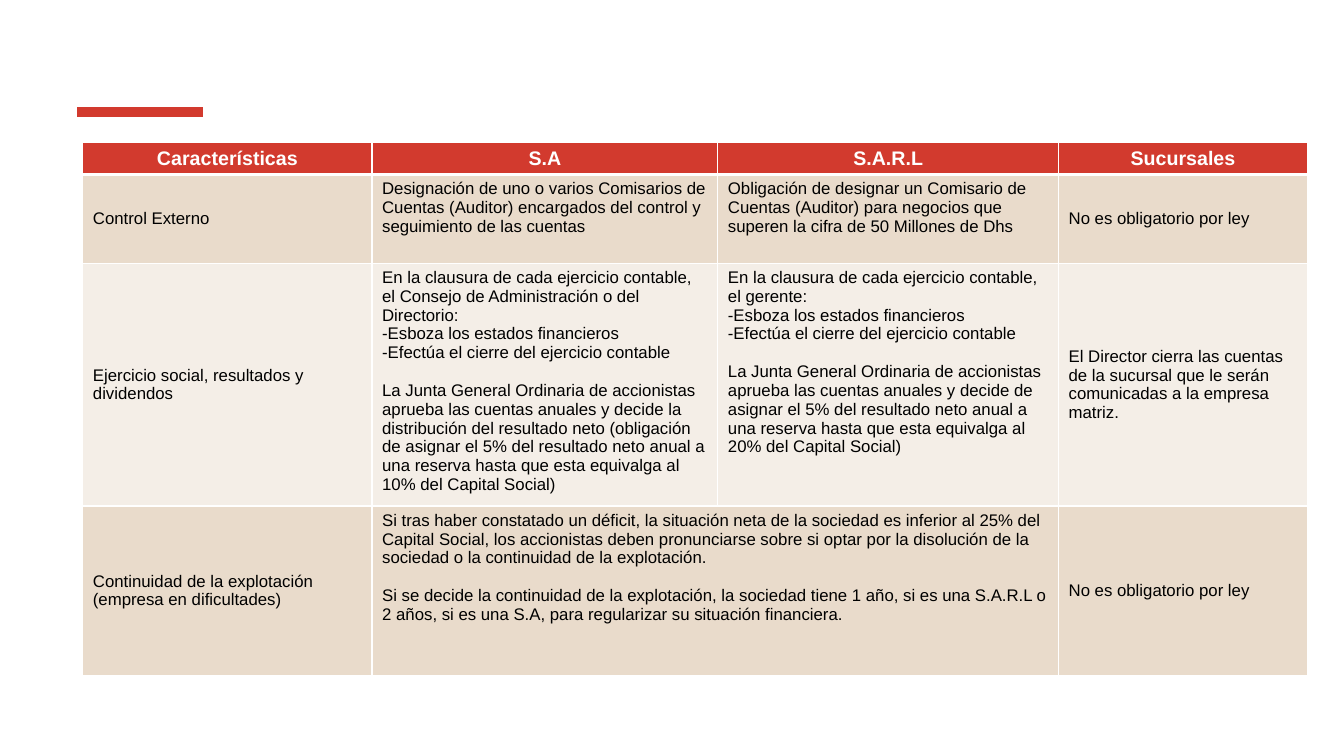
"""Build a slide with a table comparing company forms."""
import pptx
import pptx.util
import pptx.dml.color
import pptx.enum.shapes
import pptx.enum.text
import pptx.oxml
import pptx.oxml.ns

Pt = pptx.util.Pt
RGB = pptx.dml.color.RGBColor.from_string
ALIGN = pptx.enum.text.PP_ALIGN
ANCHOR = pptx.enum.text.MSO_ANCHOR
COLORS = {
    "red": "D23A2E",
    "sand": "E9DBCB",
    "cream": "F4EEE7",
    "white": "FFFFFF",
    "black": "000000",
}
WIDTHS = [206.6, 247, 243.4, 177.8]
HEIGHTS = [23, 63.4, 173.5, 121]
FILLS = ["red", "sand", "cream", "sand"]
TASKS = ["-Esboza los estados financieros", "-Efectúa el cierre del ejercicio contable"]
CLOSE = "En la clausura de cada ejercicio contable, "
BOARD = "La Junta General Ordinaria de accionistas aprueba las cuentas anuales y decide "
ROWS = [
    [["Características"], ["S.A"], ["S.A.R.L"], ["Sucursales"]],
    [
        ["Control Externo"],
        ["Designación de uno o varios Comisarios de Cuentas (Auditor) encargados del control y seguimiento de las cuentas"],
        ["Obligación de designar un Comisario de Cuentas (Auditor) para negocios que superen la cifra de 50 Millones de Dhs"],
        ["No es obligatorio por ley"],
    ],
    [
        ["Ejercicio social, resultados y dividendos"],
        [CLOSE + "el Consejo de Administración o del Directorio:", *TASKS,
         BOARD + "la distribución del resultado neto (obligación de asignar el 5% del resultado neto anual a una reserva hasta que esta equivalga al 10% del Capital Social)"],
        [CLOSE + "el gerente:", *TASKS,
         BOARD + "de asignar el 5% del resultado neto anual a una reserva hasta que esta equivalga al 20% del Capital Social)"],
        ["El Director cierra las cuentas de la sucursal que le serán comunicadas a la empresa matriz."],
    ],
    [
        ["Continuidad de la explotación (empresa en dificultades)"],
        ["Si tras haber constatado un déficit, la situación neta de la sociedad es inferior al 25% del Capital Social, los accionistas deben pronunciarse sobre si optar por la disolución de la sociedad o la continuidad de la explotación.",
         "Si se decide la continuidad de la explotación, la sociedad tiene 1 año, si es una S.A.R.L o 2 años, si es una S.A, para regularizar su situación financiera."],
        None,
        ["No es obligatorio por ley"],
    ],
]


def set_lines(cell, row):
    """Give a cell white borders, thick between header and body."""
    sides = {"L": 1, "R": 1, "T": 3 if row == 1 else 1, "B": 3 if row == 0 else 1}
    props = cell._tc.get_or_add_tcPr()
    for spot, (side, width) in enumerate(sides.items()):
        line = pptx.oxml.parse_xml(
            f'<a:ln{side} {pptx.oxml.ns.nsdecls("a")} w="{Pt(width)}"><a:solidFill>'
            f'<a:srgbClr val="{COLORS["white"]}"/></a:solidFill></a:ln{side}>')
        props.insert(spot, line)


deck = pptx.Presentation()
deck.slide_width, deck.slide_height = Pt(960), Pt(540)
slide = deck.slides.add_slide(deck.slide_layouts[6])

frame = slide.shapes.add_table(
    len(ROWS), len(WIDTHS), Pt(59.2), Pt(101.6), Pt(sum(WIDTHS)), Pt(sum(HEIGHTS)))
table = frame.table
for col, width in zip(table.columns, WIDTHS):
    col.width = Pt(width)
for row, height in zip(table.rows, HEIGHTS):
    row.height = Pt(height)
table.cell(3, 1).merge(table.cell(3, 2))

for r, row in enumerate(ROWS):
    for c, texts in enumerate(row):
        cell = table.cell(r, c)
        cell.fill.solid()
        cell.fill.fore_color.rgb = RGB(COLORS[FILLS[r]])
        set_lines(cell, r)
        if texts is None:
            continue
        head = r == 0
        side = c in (0, 3) and not head
        cell.vertical_anchor = ANCHOR.MIDDLE if side else ANCHOR.TOP
        cell.text_frame.text = "\n".join(texts)
        paras = cell.text_frame.paragraphs
        for para in paras:
            para.alignment = ALIGN.CENTER if head else ALIGN.LEFT
            for run in para.runs:
                run.font.name = "Arial"
                run.font.size = Pt(14 if head else 12)
                run.font.bold = head
                run.font.color.rgb = RGB(COLORS["white" if head else "black"])
        if len(paras) > 1:
            paras[-1].space_before = Pt(13.5)

bar = slide.shapes.add_shape(
    pptx.enum.shapes.MSO_SHAPE.RECTANGLE, Pt(54), Pt(75.6), Pt(92), Pt(9.2))
bar.shadow.inherit = False
bar.fill.solid()
bar.fill.fore_color.rgb = RGB(COLORS["red"])
bar.line.color.rgb = RGB(COLORS["white"])
bar.line.width = Pt(2)

deck.save("out.pptx")
